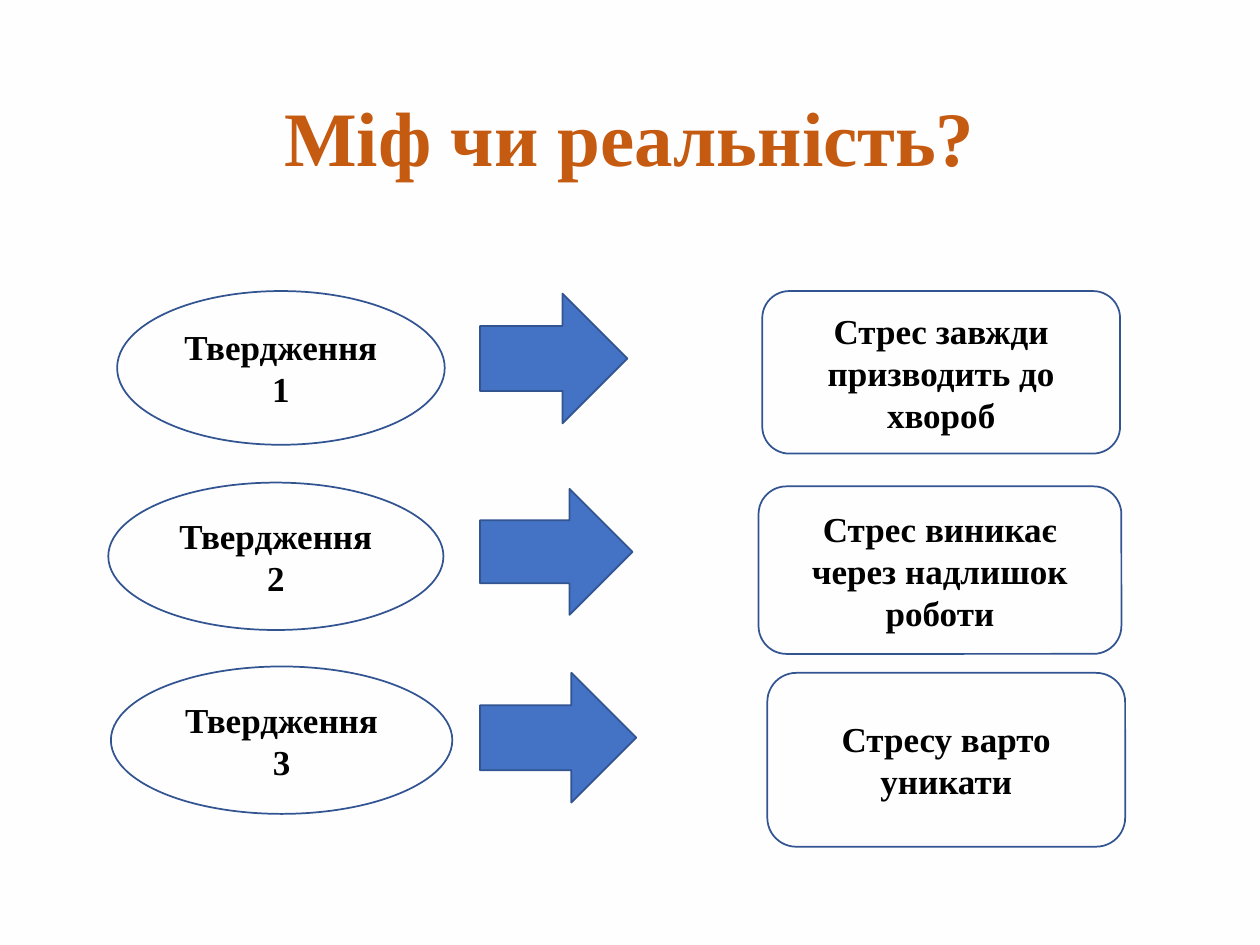
from pptx import Presentation
from pptx.dml.color import RGBColor
from pptx.enum.shapes import MSO_SHAPE
from pptx.enum.text import MSO_ANCHOR, PP_ALIGN
from pptx.util import Inches, Pt

HUES = {"paper": "FFFEFF", "title": "C55A11", "ink": "000000",
        "arrow": "4472C4", "edge": "325491"}

deck = Presentation()
deck.slide_width, deck.slide_height = Inches(10), Inches(7.5)
slide = deck.slides.add_slide(deck.slide_layouts[6])
slide.background.fill.solid()
slide.background.fill.fore_color.rgb = RGBColor.from_string(HUES["paper"])


def place(left, top, width, height):
    wide, high = deck.slide_width / 100, deck.slide_height / 100
    return int(left * wide), int(top * high), int(width * wide), int(height * high)


def write(shape, text, size=20, hue="ink", pitch=None):
    frame = shape.text_frame
    frame.word_wrap = True
    frame.vertical_anchor = MSO_ANCHOR.MIDDLE
    line = frame.paragraphs[0]
    line.alignment = PP_ALIGN.CENTER
    line.line_spacing = pitch
    run = line.add_run()
    run.text = text
    run.font.name = "Times New Roman"
    run.font.size = Pt(size)
    run.font.bold = True
    run.font.color.rgb = RGBColor.from_string(HUES[hue])


title = slide.shapes.add_textbox(*place(6.9, 5.33, 86.2, 19.33))
write(title, "Міф чи реальність?", size=44, hue="title", pitch=0.9)

columns = [
    (MSO_SHAPE.OVAL, "paper", [
        ("Твердження 1", (9.3, 30.8, 26, 16.27)),
        ("Твердження 2", (8.6, 51.07, 26.6, 15.6)),
        ("Твердження 3", (8.8, 70.53, 27.1, 15.6)),
    ]),
    (MSO_SHAPE.RIGHT_ARROW, "arrow", [
        ("", (38.1, 31.07, 11.7, 13.73)),
        ("", (38.1, 51.73, 12.1, 13.33)),
        ("", (38.1, 71.2, 12.4, 13.73)),
    ]),
    (MSO_SHAPE.ROUNDED_RECTANGLE, "paper", [
        ("Стрес завжди призводить до хвороб", (60.5, 30.8, 28.4, 17.2)),
        ("Стрес виникає через надлишок роботи", (60.2, 51.47, 28.8, 17.73)),
        ("Стресу варто уникати", (60.9, 71.2, 28.4, 18.4)),
    ]),
]

for kind, hue, cells in columns:
    for text, box in cells:
        shape = slide.shapes.add_shape(kind, *place(*box))
        shape.shadow.inherit = False
        shape.fill.solid()
        shape.fill.fore_color.rgb = RGBColor.from_string(HUES[hue])
        shape.line.color.rgb = RGBColor.from_string(HUES["edge"])
        shape.line.width = Pt(1)
        if text:
            write(shape, text)

deck.save("out.pptx")
